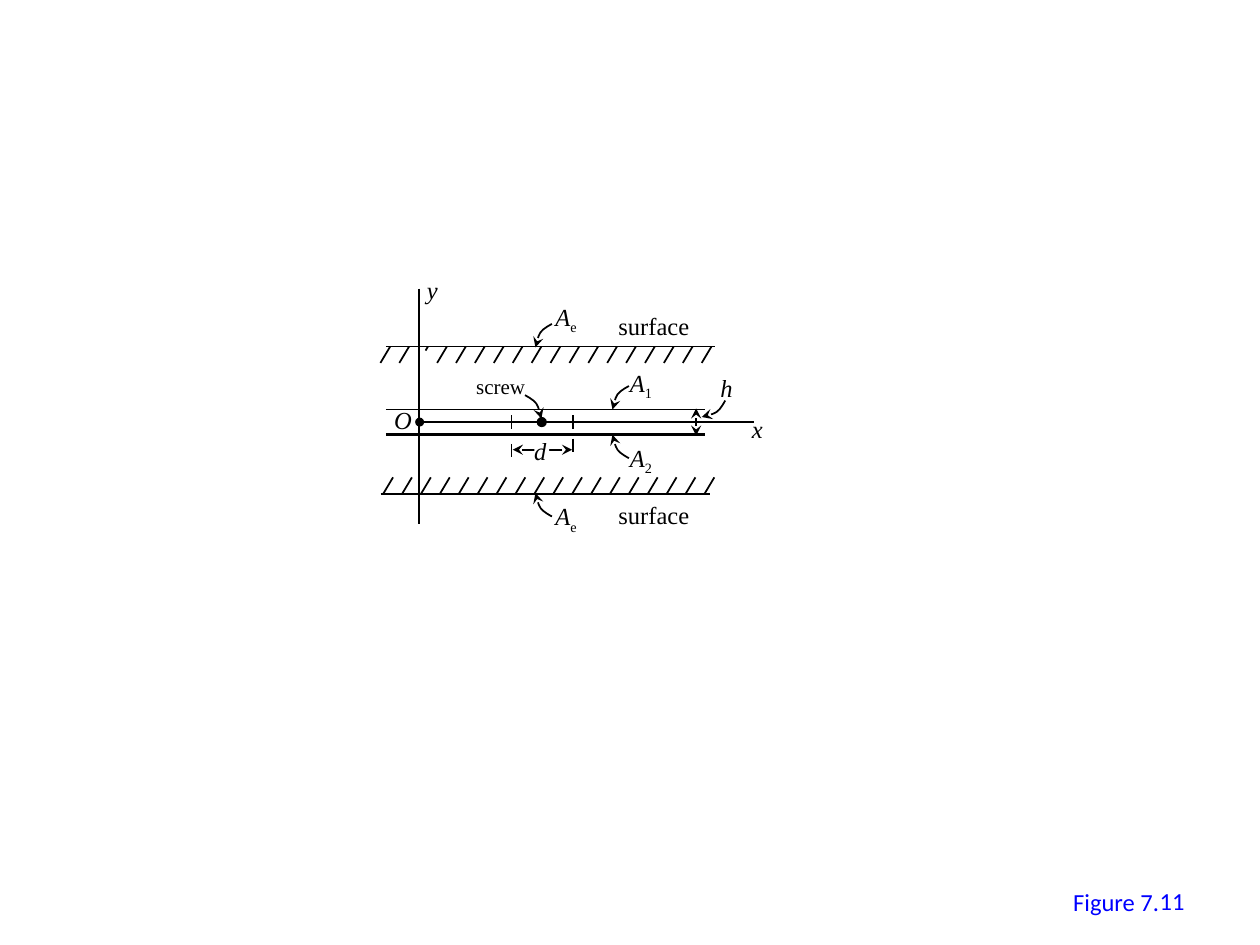
from dataclasses import dataclass

from lxml.etree import SubElement
from pptx import Presentation
from pptx.dml.color import RGBColor
from pptx.enum.shapes import MSO_CONNECTOR, MSO_SHAPE
from pptx.enum.text import MSO_ANCHOR, MSO_AUTO_SIZE, PP_ALIGN
from pptx.oxml.ns import qn
from pptx.util import Pt


@dataclass(frozen=True)
class Theme:
    ink: RGBColor = RGBColor(0, 0, 0)
    paper: RGBColor = RGBColor(255, 255, 255)
    blue: RGBColor = RGBColor(0, 0, 255)
    serif: str = "Times New Roman"
    sans: str = "Calibri"
    size: float = 14
    small: float = 12
    thin: float = 1
    bold: float = 1.5


class Figure:
    # Pointer curve from its tip: two Bezier pieces of three points each
    BEND = [(0.7, 2.9), (1.4, 5.8), (2.9, 8.6),
            (4.3, 10.8), (9.4, 13.4), (9.4, 13.4)]

    def __init__(self, slide, theme):
        self.slide = slide
        self.theme = theme

    def stroke(self, shape, width, ends=()):
        shape.line.color.rgb = self.theme.ink
        shape.line.width = Pt(width)
        line = shape.line._get_or_add_ln()
        for end in ends:
            SubElement(line, qn(f"a:{end}"), type="stealth")

    def line(self, x1, y1, x2, y2, width=None, ends=()):
        item = self.slide.shapes.add_connector(
            MSO_CONNECTOR.STRAIGHT, Pt(x1), Pt(y1), Pt(x2), Pt(y2))
        self.stroke(item, width or self.theme.thin, ends)
        SubElement(item._element.spPr, qn("a:effectLst"))

    def hatch(self, x, y, dx, dy, short=()):
        for i in range(18):
            part = 0.25 if i in short else 1
            left = x + 10.8 * i
            self.line(left, y, left + dx * part, y + dy * part)

    def shape(self, kind, x, y, w, h, color):
        item = self.slide.shapes.add_shape(kind, Pt(x), Pt(y), Pt(w), Pt(h))
        item.shadow.inherit = False
        item.fill.solid()
        item.fill.fore_color.rgb = color
        item.line.fill.background()
        return item

    def dot(self, x, y, size):
        item = self.shape(MSO_SHAPE.OVAL, x - size / 2, y - size / 2,
                          size, size, self.theme.ink)
        self.stroke(item, self.theme.bold)

    def pointer(self, x, y, right=1, down=1, flat=False):
        bend = [(b, a) if flat else (a, b) for a, b in self.BEND]
        pen = self.slide.shapes.build_freeform(Pt(x), Pt(y))
        pen.add_line_segments(
            [(Pt(x + right * a), Pt(y + down * b)) for a, b in bend],
            close=False)
        item = pen.convert_to_shape()
        item.shadow.inherit = False
        item.fill.background()
        self.stroke(item, self.theme.thin, ["headEnd"])
        # Turn the straight pieces into curves
        trace = next(item._element.iter(qn("a:path")))
        legs = trace.findall(qn("a:lnTo"))
        for i in range(0, len(legs), 3):
            curve = SubElement(trace, qn("a:cubicBezTo"))
            for leg in legs[i:i + 3]:
                curve.append(leg[0])
                trace.remove(leg)

    def text(self, x, y, w, words, sub="", italic=True, size=None,
             font=None, color=None, h=24.5):
        box = self.slide.shapes.add_textbox(Pt(x), Pt(y), Pt(w), Pt(h))
        frame = box.text_frame
        frame.word_wrap = False
        frame.auto_size = MSO_AUTO_SIZE.SHAPE_TO_FIT_TEXT
        para = frame.paragraphs[0]
        para.font.name = font or self.theme.serif
        para.font.size = Pt(size or self.theme.size)
        para.font.color.rgb = color or self.theme.ink
        run = para.add_run()
        run.text = words
        run.font.italic = italic
        if sub:
            low = para.add_run()
            low.text = sub
            low.font.italic = False
            low.font._element.set("baseline", "-25000")
        return frame

    def caption(self, x, y, w, words, h=24.5):
        return self.text(x, y, w, words, italic=False, h=h,
                         font=self.theme.sans, color=self.theme.blue)


def main():
    deck = Presentation()
    deck.slide_width, deck.slide_height = Pt(720), Pt(540)
    theme = Theme()
    fig = Figure(deck.slides.add_slide(deck.slide_layouts[6]), theme)
    both = ["headEnd", "tailEnd"]
    top, upper, axis, lower, base = 198, 234, 241.2, 248.4, 282.2

    # Hatched outer surfaces
    fig.line(220.5, top, 408.5, top)
    fig.hatch(223, top, -5.6, 9.4, short=[2])
    fig.line(217.5, base, 405.5, base)
    fig.hatch(219, base, 5.6, -9.4)

    # Plates and axes
    for y in (upper, lower):
        fig.line(220.5, y, 403, y, theme.thin if y == upper else theme.bold)
    fig.line(239.5, axis, 431, axis, theme.bold)
    fig.line(239.5, 165, 239.5, 299.5, theme.bold)
    fig.dot(239.8, axis, 3.6)
    fig.dot(309.6, axis, 4.3)

    # Pointers: screw, plates, gap, surfaces
    fig.pointer(309.4, 239.2, right=-1, down=-1)
    fig.pointer(350, upper, down=-1)
    fig.pointer(350, lower)
    fig.pointer(401, 238.3, down=-1, flat=True)
    fig.pointer(306, top + 0.5, down=-1)
    fig.pointer(306, base - 0.5)

    # Dimensions h and d
    fig.line(397.8, 249, 397.8, 233.3, ends=both)
    fig.line(327, 257, 293, 257, ends=both)
    for x, y in ((292.3, 253.6), (327.6, 250.6)):
        fig.line(x, y, x, y + 7.6)
        fig.line(x, 237.4, x, 245)
    fig.shape(MSO_SHAPE.RECTANGLE, 305.3, 252.7, 8.6, 10.8, theme.paper)

    # Italic symbols
    for x, y, w, words in ((422.6, 233.3, 24.5, "x"), (236.9, 153.4, 24.5, "y"),
                           (218.2, 228.2, 28.8, "O"), (404.6, 209.5, 25.2, "h"),
                           (298.1, 245.5, 25.2, "d")):
        fig.text(x, y, w, words)
    for x, y, sub in ((310.3, 169.2, "e"), (310.3, 283, "e"),
                      (352.8, 206.6, "1"), (352.8, 249.8, "2")):
        fig.text(x, y, 31.3, "A", sub)

    # Plain labels
    for y in (174.2, 282.2):
        fig.text(346.3, y, 55.4, "surface", italic=False)
    fig.text(265, 210.2, 42.5, "screw", italic=False, size=theme.small, h=21.6)

    # Figure number
    fig.caption(606.2, 503.3, 64, "Figure 7.")
    number = fig.caption(516.2, 500.4, 167.8, "11", h=28.8)
    number.auto_size = MSO_AUTO_SIZE.NONE
    number.word_wrap = True
    number.vertical_anchor = MSO_ANCHOR.MIDDLE
    number.paragraphs[0].alignment = PP_ALIGN.RIGHT

    deck.save("out.pptx")


if __name__ == "__main__":
    main()
